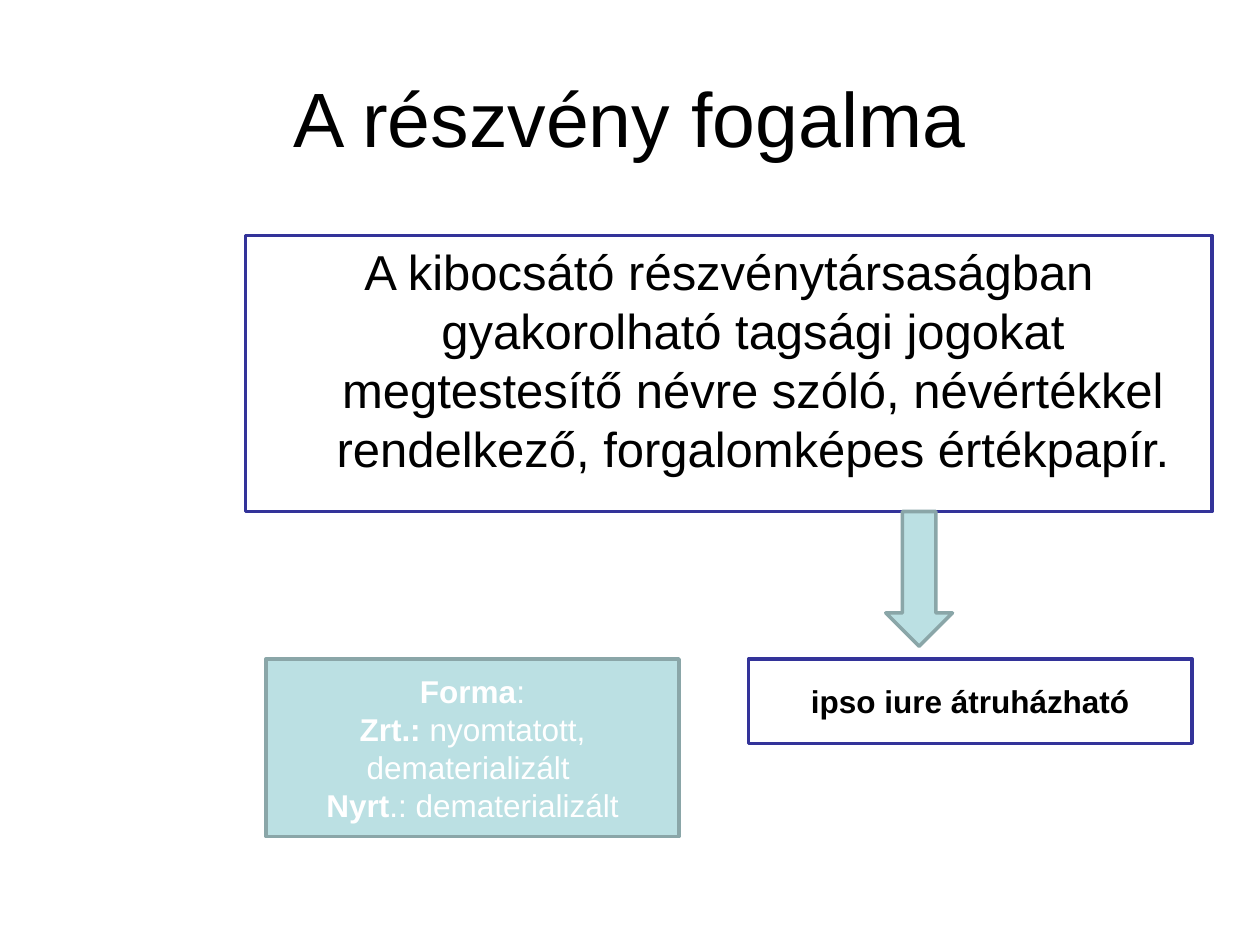
from dataclasses import dataclass

from pptx import Presentation
from pptx import util as u
from pptx.dml.color import RGBColor
from pptx.enum import shapes, text

# Slide grid: 100 columns by 75 rows of equal square cells
WIDTH, HEIGHT = u.Inches(10), u.Inches(7.5)
COLUMNS, ROWS = 100, 75
BOX_ROW = 52.3  # shared top of the two lower boxes


@dataclass(frozen=True)
class Theme:
    font: str = "Arial"
    ink: str = "000000"
    paper: str = "FFFFFF"
    frame: str = "333399"
    accent: str = "BBE0E3"
    accent_edge: str = "8AA6A8"
    title_size: int = 44
    body_size: int = 28
    box_size: int = 18
    line_width: int = 2


THEME = Theme()


def place(column, row, columns, rows):
    """Turn a grid area into left, top, width and height."""
    return (round(WIDTH * column / COLUMNS), round(HEIGHT * row / ROWS),
            round(WIDTH * columns / COLUMNS), round(HEIGHT * rows / ROWS))


def outline(shape, color):
    shape.line.color.rgb = RGBColor.from_string(color)
    shape.line.width = u.Pt(THEME.line_width)


def write(shape, paragraphs, size, color, anchor=text.MSO_ANCHOR.MIDDLE):
    """Write centred paragraphs, each a list of (wording, bold) runs."""
    frame = shape.text_frame
    frame.word_wrap = True
    frame.vertical_anchor = anchor
    frame.text = "\n".join("" for _ in paragraphs)
    for paragraph, runs in zip(frame.paragraphs, paragraphs):
        paragraph.alignment = text.PP_ALIGN.CENTER
        for wording, bold in runs:
            run = paragraph.add_run()
            run.text = wording
            run.font.name = THEME.font
            run.font.size = u.Pt(size)
            run.font.bold = bold
            run.font.color.rgb = RGBColor.from_string(color)


def add_text(slide, area, wording, size, anchor):
    box = slide.shapes.add_textbox(*place(*area))
    write(box, [[(wording, False)]], size, THEME.ink, anchor)
    return box


def add_filled(slide, kind, area, fill, edge):
    shape = slide.shapes.add_shape(kind, *place(*area))
    shape.shadow.inherit = False
    shape.fill.solid()
    shape.fill.fore_color.rgb = RGBColor.from_string(fill)
    outline(shape, edge)
    return shape


def add_definition(slide, area, wording):
    """Framed definition with a hanging indent."""
    box = add_text(slide, area, wording, THEME.body_size, text.MSO_ANCHOR.TOP)
    outline(box, THEME.frame)
    properties = box.text_frame.paragraphs[0]._p.get_or_add_pPr()
    hang = u.Inches(0.38)
    properties.set("marL", str(hang))
    properties.set("indent", str(-hang))


def main():
    presentation = Presentation()
    presentation.slide_width, presentation.slide_height = WIDTH, HEIGHT
    slide = presentation.slides.add_slide(presentation.slide_layouts[6])
    kinds = shapes.MSO_SHAPE

    # Title and definition
    add_text(slide, (5, 3, 90, 12.5), "A részvény fogalma",
             THEME.title_size, text.MSO_ANCHOR.MIDDLE)
    add_definition(slide, (19.5, 18.7, 76.7, 21.9),
                   "A kibocsátó részvénytársaságban gyakorolható tagsági jogokat "
                   "megtestesítő névre szóló, névértékkel rendelkező, "
                   "forgalomképes értékpapír.")

    # Transferability
    transfer = add_filled(slide, kinds.RECTANGLE, (59.4, BOX_ROW, 35.2, 6.7),
                          THEME.paper, THEME.frame)
    write(transfer, [[("ipso iure átruházható", True)]], THEME.box_size, THEME.ink)

    # Form of the share
    form = add_filled(slide, kinds.RECTANGLE, (21.1, BOX_ROW, 32.8, 14.1),
                      THEME.accent, THEME.accent_edge)
    write(form, [
        [("Forma", True), (":", False)],
        [("Zrt.:", True), (" nyomtatott, dematerializált ", False)],
        [("Nyrt", True), (".: dematerializált", False)],
    ], THEME.box_size, THEME.paper)

    # Arrow from the definition to its consequence
    add_filled(slide, kinds.DOWN_ARROW, (70.3, 40.6, 5.3, 10.7),
               THEME.accent, THEME.accent_edge)

    presentation.save("out.pptx")


if __name__ == "__main__":
    main()
